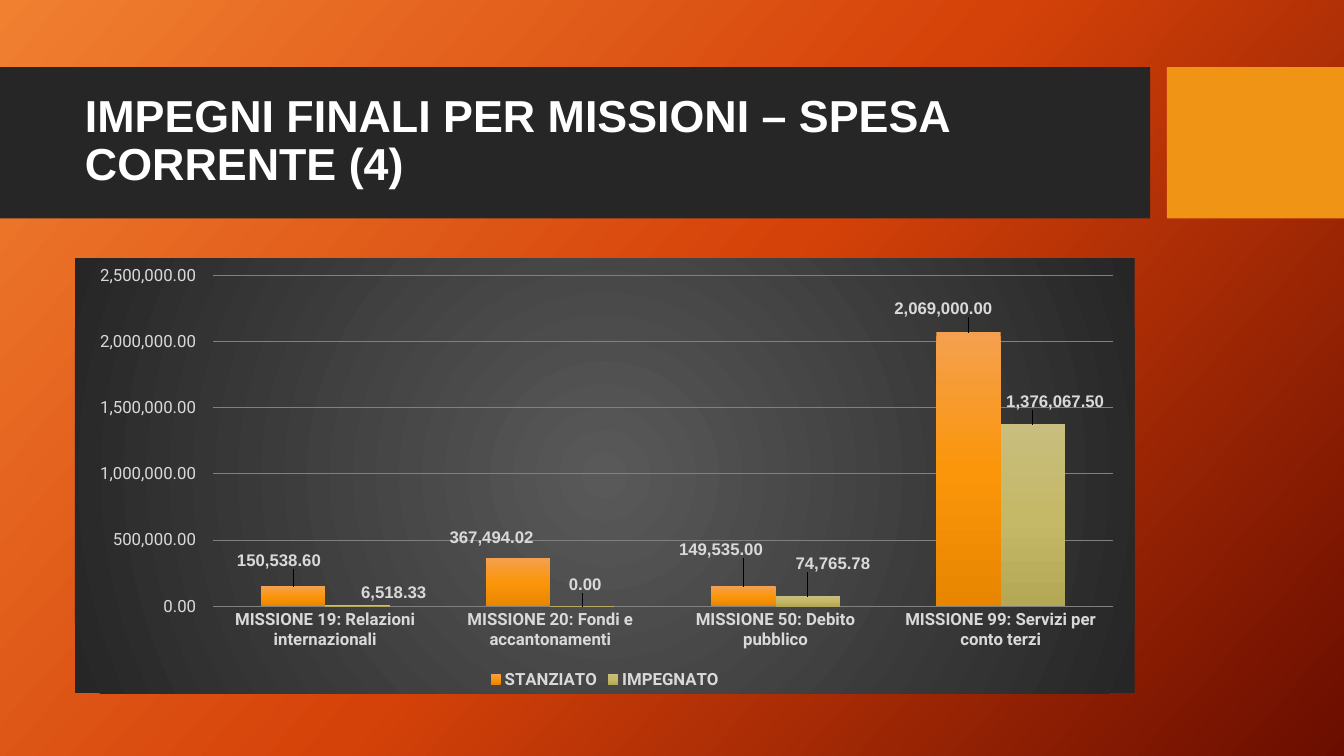
from lxml import etree
from pptx import Presentation
from pptx.chart.data import CategoryChartData
from pptx.dml.color import RGBColor
from pptx.enum.chart import XL_CHART_TYPE as ChartType, XL_LABEL_POSITION as LabelPosition
from pptx.enum.chart import XL_LEGEND_POSITION as LegendPosition, XL_TICK_MARK as TickMark
from pptx.enum.shapes import MSO_SHAPE as Shape
from pptx.enum.text import MSO_ANCHOR as Anchor, MSO_AUTO_SIZE as AutoSize, PP_ALIGN as Align
from pptx.oxml import parse_xml
from pptx.oxml.ns import qn
from pptx.util import Pt

TITLE = "IMPEGNI FINALI PER MISSIONI – SPESA CORRENTE (4)"
CATEGORIES = [
    "MISSIONE 19: Relazioni internazionali",
    "MISSIONE 20: Fondi e accantonamenti",
    "MISSIONE 50: Debito pubblico",
    "MISSIONE 99: Servizi per conto terzi",
]
SERIES = [
    {
        "name": "STANZIATO",
        "values": [150538.6, 367494.02, 149535, 2069000],
        "label_shifts": [(-5, -9), (-14, -5), (-11, -17), (-13, -8)],
        "stops": [(0, "F4A050"), (50, "FB960A"), (100, "E88600")],
    },
    {
        "name": "IMPEGNATO",
        "values": [6518.33, 0, 74765.78, 1376067.5],
        "label_shifts": [(31, 0), (7, -6), (23, -14), (21, -7)],
        "stops": [(0, "C8BE7F"), (50, "C5B867"), (100, "B4A756")],
    },
]
BACKGROUND_STOPS = [(0, "F18031"), (50, "D54209"), (100, "6A0D00")]
CHART_STOPS = [(0, "595959"), (100, "262626")]
COLORS = {"band": "262626", "accent": "F09415", "title": "FFFFFF", "text": "D9D9D9", "grid": "808080"}
NUMBER_FORMAT = r"#,##0.00\ _€"

SLIDE_W, SLIDE_H = 960, 540
BAND_TOP, BAND_H, BAND_W, BAND_GAP = 48, 108, 821.5, 12
CONTENT_LEFT, CONTENT_W = 53.5, 757
TITLE_TOP, TITLE_H = 59, 85
CHART_TOP, CHART_H = 184.3, 311
PLOT = {"x": 0.13, "y": 0.04, "w": 0.85, "h": 0.76}

A_NS = "http://schemas.openxmlformats.org/drawingml/2006/main"
C_NS = "http://schemas.openxmlformats.org/drawingml/2006/chart"


def color(name):
    return RGBColor.from_string(COLORS[name])


def gradient(stops, angle=None):
    marks = "".join(
        f'<a:gs pos="{place * 1000}"><a:srgbClr val="{tint}"/></a:gs>' for place, tint in stops
    )
    if angle is None:
        direction = (
            '<a:path path="circle">'
            '<a:fillToRect l="50000" t="50000" r="50000" b="50000"/></a:path>'
        )
    else:
        direction = f'<a:lin ang="{angle * 60000}" scaled="0"/>'
    return parse_xml(
        f'<a:gradFill xmlns:a="{A_NS}" rotWithShape="1"><a:gsLst>{marks}</a:gsLst>{direction}</a:gradFill>'
    )


def replace_fill(parent, fill):
    solid = next(parent.iter(qn("a:solidFill")))
    solid.getparent().replace(solid, fill)


def manual_layout(**settings):
    fields = "".join(f'<c:{key} val="{value}"/>' for key, value in settings.items())
    return parse_xml(f'<c:layout xmlns:c="{C_NS}"><c:manualLayout>{fields}</c:manualLayout></c:layout>')


def style_font(font, name, size, tint, bold):
    font.name, font.size, font.bold = name, Pt(size), bold
    font.color.rgb = color(tint)


def add_band(slide, left, width, fill):
    band = slide.shapes.add_shape(Shape.RECTANGLE, Pt(left), Pt(BAND_TOP), Pt(width), Pt(BAND_H))
    band.shadow.inherit = False
    band.fill.solid()
    band.fill.fore_color.rgb = color(fill)
    band.line.fill.background()


def add_title(slide):
    title = slide.shapes.title
    title.left, title.top = Pt(CONTENT_LEFT), Pt(TITLE_TOP)
    title.width, title.height = Pt(CONTENT_W), Pt(TITLE_H)
    frame = title.text_frame
    frame.text = TITLE
    frame.word_wrap = True
    frame.auto_size = AutoSize.NONE
    frame.vertical_anchor = Anchor.MIDDLE
    para = frame.paragraphs[0]
    para.alignment = Align.LEFT
    para.line_spacing = 0.9
    style_font(para.font, "Arial", 32, "title", True)
    slide.shapes._spTree.append(title._element)


def style_axes(chart):
    for axis, bold in ((chart.category_axis, True), (chart.value_axis, False)):
        axis.major_tick_mark = axis.minor_tick_mark = TickMark.NONE
        axis.format.line.fill.background()
        style_font(axis.tick_labels.font, "Roboto", 12, "text", bold)
    values = chart.value_axis
    values.minimum_scale, values.maximum_scale, values.major_unit = 0, 2500000, 500000
    values.tick_labels.number_format = NUMBER_FORMAT
    values.tick_labels.number_format_is_linked = False
    values.has_major_gridlines = True
    values.major_gridlines.format.line.color.rgb = color("grid")
    values.major_gridlines.format.line.width = Pt(0.75)


def style_series(series, content):
    series.format.fill.solid()
    series.format.fill.fore_color.rgb = color("accent")
    replace_fill(series._element, gradient(content["stops"], 90))
    labels = series.data_labels
    labels.show_value = True
    labels.number_format = NUMBER_FORMAT
    labels.number_format_is_linked = False
    labels.position = LabelPosition.OUTSIDE_END
    style_font(labels.font, "Arial", 12, "text", True)
    for index, (across, down) in enumerate(content["label_shifts"]):
        label = series.points[index].data_label
        label.position = LabelPosition.OUTSIDE_END
        style_font(label.font, "Arial", 12, "text", True)
        entry = next(e for e in labels._element.findall(qn("c:dLbl")) if e.idx_val == index)
        layout = manual_layout(x=round(across / CONTENT_W, 4), y=round(down / CHART_H, 4))
        entry.find(qn("c:idx")).addnext(layout)
        number = etree.Element(qn("c:numFmt"), formatCode=NUMBER_FORMAT, sourceLinked="0")
        layout.addnext(number)


def add_chart(slide):
    data = CategoryChartData(number_format=NUMBER_FORMAT)
    data.categories = CATEGORIES
    for content in SERIES:
        data.add_series(content["name"], content["values"])
    chart = slide.shapes.add_chart(
        ChartType.COLUMN_CLUSTERED, Pt(CONTENT_LEFT), Pt(CHART_TOP), Pt(CONTENT_W), Pt(CHART_H), data
    ).chart
    style_font(chart.font, "Roboto", 10, "title", False)
    chart.has_title = False
    chart.has_legend = True
    chart.legend.position = LegendPosition.BOTTOM
    chart.legend.include_in_layout = False
    style_font(chart.legend.font, "Roboto", 12, "text", True)
    style_axes(chart)
    plot = chart.plots[0]
    plot.gap_width, plot.overlap, plot.vary_by_categories = 150, 0, False
    for series, content in zip(plot.series, SERIES):
        style_series(series, content)

    space = chart._chartSpace
    area = space.chart.plotArea
    for layout in area.findall(qn("c:layout")):
        area.remove(layout)
    area.insert(0, manual_layout(layoutTarget="inner", xMode="edge", yMode="edge", **PLOT))
    frame = parse_xml(
        f'<c:spPr xmlns:c="{C_NS}" xmlns:a="{A_NS}"><a:ln><a:noFill/></a:ln></c:spPr>'
    )
    frame.insert(0, gradient(CHART_STOPS))
    space.chart.addnext(frame)


def main():
    deck = Presentation()
    deck.slide_width, deck.slide_height = Pt(SLIDE_W), Pt(SLIDE_H)
    slide = deck.slides.add_slide(deck.slide_layouts[5])
    slide.background.fill.solid()
    slide.background.fill.fore_color.rgb = color("accent")
    replace_fill(slide._element, gradient(BACKGROUND_STOPS, 42))
    accent_left = BAND_W + BAND_GAP
    add_band(slide, 0, BAND_W, "band")
    add_band(slide, accent_left, SLIDE_W - accent_left, "accent")
    add_title(slide)
    add_chart(slide)
    deck.save("out.pptx")


if __name__ == "__main__":
    main()
